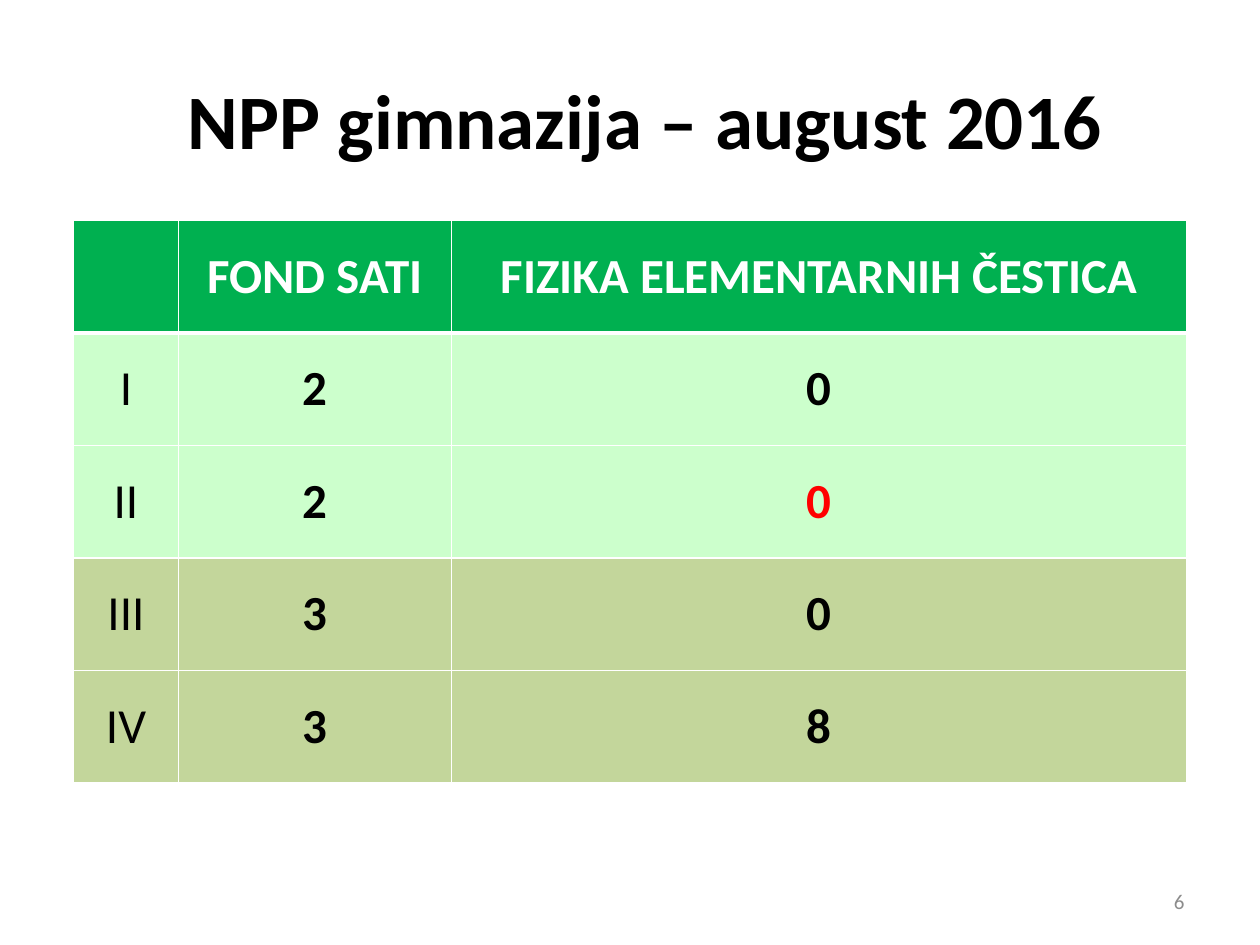
import dataclasses

import lxml.etree
import pptx
import pptx.dml.color
import pptx.enum.text
import pptx.oxml.ns
import pptx.util


@dataclasses.dataclass(frozen=True)
class Theme:
    font: str = "Calibri"
    title_size: int = 44
    table_size: int = 28
    number_size: int = 12
    black: str = "000000"
    white: str = "FFFFFF"
    red: str = "FF0000"
    gray: str = "8C8C8C"
    header: str = "00B050"
    lower_years: str = "CCFFCC"
    upper_years: str = "C3D69B"


theme = Theme()
Pt = pptx.util.Pt
RGBColor = pptx.dml.color.RGBColor
PP_ALIGN = pptx.enum.text.PP_ALIGN
MSO_ANCHOR = pptx.enum.text.MSO_ANCHOR
qn = pptx.oxml.ns.qn


def write(para, text, size, color, bold, align=PP_ALIGN.CENTER):
    para.text = text
    para.alignment = align
    para.font.name = theme.font
    para.font.size = Pt(size)
    para.font.bold = bold
    para.font.color.rgb = RGBColor.from_string(color)


def add_border(cell, side, width):
    line = lxml.etree.SubElement(cell._tc.get_or_add_tcPr(), qn(f"a:{side}"), w=str(Pt(width)))
    fill = lxml.etree.SubElement(line, qn("a:solidFill"))
    lxml.etree.SubElement(fill, qn("a:srgbClr"), val=theme.white)


deck = pptx.Presentation()
deck.slide_width = Pt(720)
deck.slide_height = Pt(540)
page = deck.slides.add_slide(deck.slide_layouts[5])

title = page.shapes.title
title.left, title.top, title.width, title.height = Pt(36), Pt(21.6), Pt(666), Pt(92)
title.text_frame.vertical_anchor = MSO_ANCHOR.MIDDLE
write(title.text_frame.paragraphs[0], "NPP gimnazija – august 2016", theme.title_size, theme.black, True)

rows = [
    ("", "FOND SATI", "FIZIKA ELEMENTARNIH ČESTICA"),
    ("I", "2", "0"),
    ("II", "2", "0"),
    ("III", "3", "0"),
    ("IV", "3", "8"),
]
row_fills = [theme.header] + [theme.lower_years] * 2 + [theme.upper_years] * 2
column_widths = [60, 156, 420]
row_height = 64.3
highlighted = (2, 2)

table = page.shapes.add_table(
    len(rows), len(column_widths), Pt(42), Pt(126), Pt(sum(column_widths)), Pt(row_height * len(rows))
).table
for column, width in zip(table.columns, column_widths):
    column.width = Pt(width)

for r, (texts, fill) in enumerate(zip(rows, row_fills)):
    table.rows[r].height = Pt(row_height)
    for c, text in enumerate(texts):
        cell = table.cell(r, c)
        cell.vertical_anchor = MSO_ANCHOR.MIDDLE
        for side in ("lnL", "lnR", "lnT", "lnB"):
            thick = (r, side) in ((0, "lnB"), (1, "lnT"))
            add_border(cell, side, 3 if thick else 1)
        cell.fill.solid()
        cell.fill.fore_color.rgb = RGBColor.from_string(fill)
        if r == 0:
            color = theme.white
        else:
            color = theme.red if (r, c) == highlighted else theme.black
        write(cell.text_frame.paragraphs[0], text, theme.table_size, color, r == 0 or c > 0)

number = page.shapes.add_textbox(Pt(516), Pt(500.5), Pt(168), Pt(28.75))
number.text_frame.word_wrap = True
number.text_frame.vertical_anchor = MSO_ANCHOR.MIDDLE
write(number.text_frame.paragraphs[0], "6", theme.number_size, theme.gray, False, PP_ALIGN.RIGHT)

deck.save("out.pptx")
